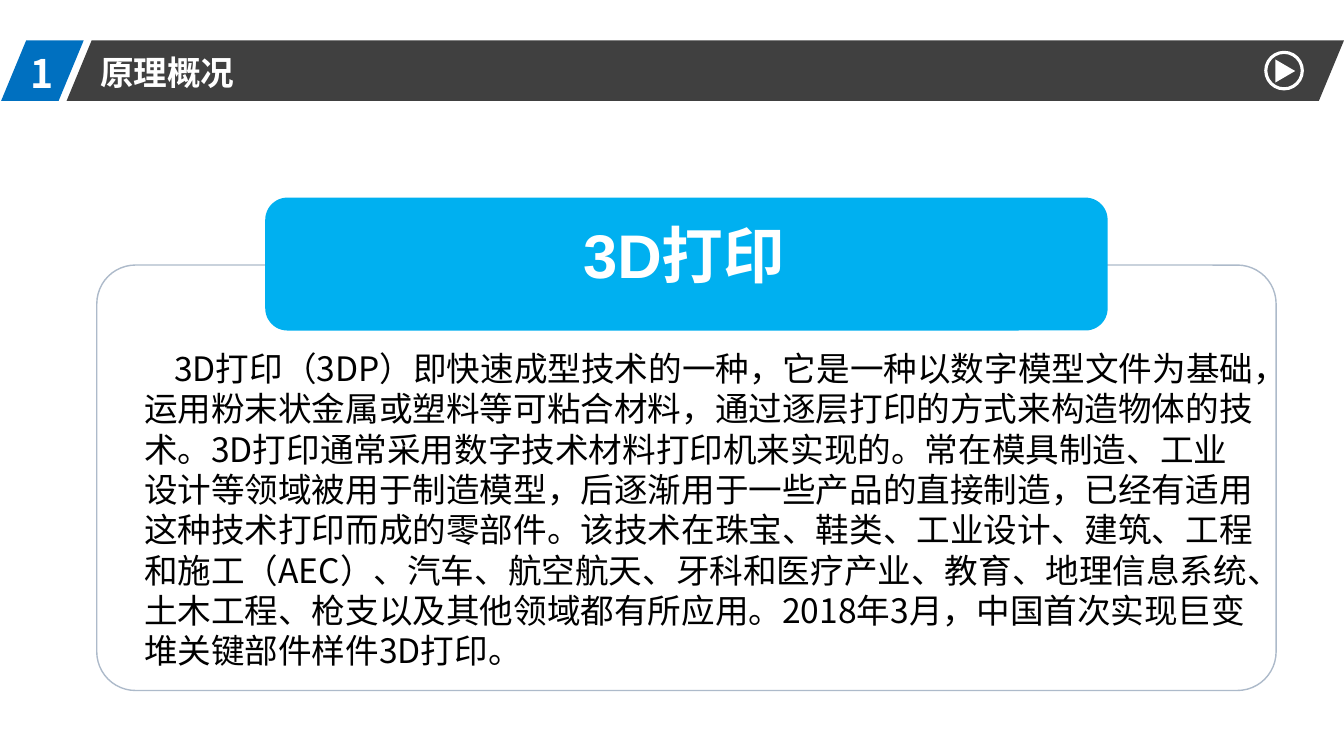
from dataclasses import dataclass

from lxml.etree import SubElement
from pptx import Presentation
from pptx.dml.color import RGBColor as RGB
from pptx.enum.shapes import MSO_SHAPE as Kind
from pptx.enum.text import MSO_ANCHOR as Anchor, PP_ALIGN as Align
from pptx.oxml.ns import qn
from pptx.util import Cm, Pt


@dataclass(frozen=True)
class Theme:
    white: str = "FFFFFF"
    black: str = "000000"
    dark: str = "404040"
    blue: str = "0070C0"
    sky: str = "00B0F0"
    edge: str = "ADBACA"
    sans: str = "Noto Sans CJK SC"
    latin: str = "Arial"
    body: int = 24
    number: int = 28
    banner: int = 44


THEME = Theme()
BODY = (
    "3D打印（3DP）即快速成型技术的一种，它是一种以数字模型文件为基础，"
    "运用粉末状金属或塑料等可粘合材料，通过逐层打印的方式来构造物体的技术。"
    "3D打印通常采用数字技术材料打印机来实现的。常在模具制造、工业设计等领域"
    "被用于制造模型，后逐渐用于一些产品的直接制造，已经有适用这种技术打印而成的"
    "零部件。该技术在珠宝、鞋类、工业设计、建筑、工程和施工（AEC）、汽车、"
    "航空航天、牙科和医疗产业、教育、地理信息系统、土木工程、枪支以及其他领域"
    "都有所应用。2018年3月，中国首次实现巨变堆关键部件样件3D打印。"
)


def place(item, box):
    item.left, item.top, item.width, item.height = (Cm(n) for n in box)


def draw(slide, kind, box, fill=None, line=None, width=1, adj=None, turn=0):
    item = slide.shapes.add_shape(kind, *(Cm(n) for n in box))
    item.shadow.inherit = False
    item.rotation = turn
    if adj is not None:
        item.adjustments[0] = adj
    if fill:
        item.fill.solid()
        item.fill.fore_color.rgb = RGB.from_string(fill)
    else:
        item.fill.background()
    if line:
        item.line.color.rgb = RGB.from_string(line)
        item.line.width = Pt(width)
    else:
        item.line.fill.background()
    return item


def write(slide, text, box, item=None, size=THEME.body, font=THEME.sans,
          color=THEME.white, bold=True, align=Align.LEFT, wrap=True,
          indent=0, before=0, pitch=None):
    item = item or slide.shapes.add_textbox(0, 0, 0, 0)
    place(item, box)
    frame = item.text_frame
    frame.word_wrap = wrap
    frame.vertical_anchor = Anchor.TOP
    para = frame.paragraphs[0]
    para.alignment = align
    para.space_before = Pt(before)
    if pitch:
        para.line_spacing = pitch
    if indent:
        para._p.get_or_add_pPr().set("indent", str(Cm(indent)))
    run = para.add_run()
    run.text = text
    run.font.size = Pt(size)
    run.font.bold = bold
    run.font.name = font
    run.font.color.rgb = RGB.from_string(color)
    SubElement(run._r.get_or_add_rPr(), qn("a:ea"), typeface=THEME.sans)
    return item


def play(slide, left, top, side):
    draw(slide, Kind.OVAL, (left, top, side, side),
         line=THEME.white, width=2.25)
    draw(slide, Kind.ISOSCELES_TRIANGLE,
         (left + 0.2, top + 0.22, 0.58, 0.5), fill=THEME.white, turn=90)


def header(slide, left, top, width, height):
    slant = 0.415
    draw(slide, Kind.PARALLELOGRAM,
         (left + 1.65, top, width - 1.65, height), fill=THEME.dark, adj=slant)
    draw(slide, Kind.PARALLELOGRAM,
         (left, top, 2.08, height), fill=THEME.blue, adj=slant)
    write(slide, "1", (left + 0.48, top + 0.1, 1.75, 1.45),
          size=THEME.number)
    title = slide.shapes.title
    slide.shapes._spTree.append(title._element)
    write(slide, "原理概况", (left + 2.24, top + 0.15, 3.94, 1.27),
          item=title, wrap=False)
    play(slide, left + width - 1.97, top + 0.3, 0.92)


def panel(slide, left, top, width, height):
    draw(slide, Kind.ROUNDED_RECTANGLE, (left, top, width, height),
         line=THEME.edge, adj=0.091)
    write(slide, BODY, (left + 0.94, top + 1.96, 28.5, 8.46),
          color=THEME.black, bold=False, indent=0.76)
    span = 21.23
    side = left + (width - span) / 2
    draw(slide, Kind.ROUNDED_RECTANGLE, (side, top - 1.7, span, 3.35),
         fill=THEME.sky, adj=0.167)
    write(slide, "3D打印", (side + 1.5, top - 1.35, 18.11, 2.13),
          size=THEME.banner, font=THEME.latin, align=Align.CENTER)


def main():
    deck = Presentation()
    deck.slide_width, deck.slide_height = Cm(33.87), Cm(19.05)
    slide = deck.slides.add_slide(deck.slide_layouts[5])
    header(slide, 0.03, 1.02, 33.84, 1.52)
    panel(slide, 2.44, 6.68, 29.72, 10.72)
    deck.save("out.pptx")


if __name__ == "__main__":
    main()
